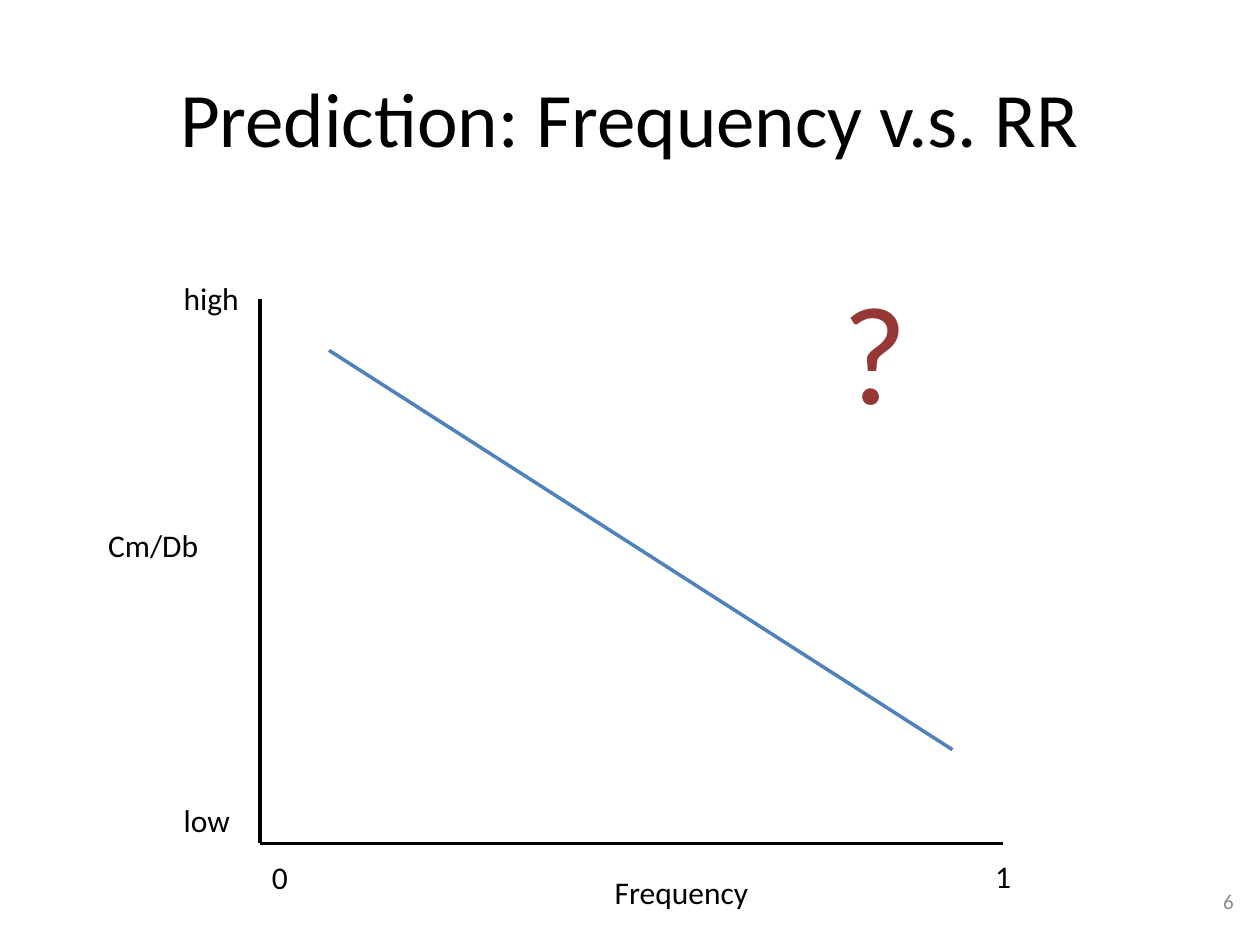
from pptx import Presentation
from pptx import util as u
from pptx.dml.color import RGBColor
from pptx.enum import shapes, text
from pptx.oxml.ns import qn
from lxml import etree

THEME = {
    "font": "Calibri",
    "ink": "000000", "muted": "8C8C8C", "trend": "4F81BD", "query": "953735",
    "title": 44, "label": 18, "number": 12, "mark": 80, "line": 2,
}

# Content: text and box (left, top, width, height) in points
TITLE = ("Prediction: Frequency v.s. RR", (36, 21.6, 648, 90))
NUMBER = ("6", (544.3, 500.4, 167.8, 28.8))
MARK = ("?", (474.5, 147.6, 51.8, 104.4))

# Axis labels: text, left, top, width
LABEL_H = 28.8
LABELS = [
    ("Cm/Db", 54.7, 296.9, 66.2),
    ("Frequency", 344.2, 495.4, 91.4),
    ("1", 561.6, 486, 23.8),
    ("high", 97.9, 156.2, 46.1),
    ("low", 97.9, 454.3, 41),
    ("0", 148.3, 486.7, 23.8),
]

# Axes meet at the origin; the trend falls from left to right
ORIGIN = (148.5, 482)
Y_TOP, X_END = 170.6, 573.1
LINES = [
    ((ORIGIN[0], Y_TOP), ORIGIN, "ink"),
    (ORIGIN, (X_END, ORIGIN[1]), "ink"),
    ((188, 200.2), (544.3, 428.4), "trend"),
]

prs = Presentation()
prs.slide_width, prs.slide_height = u.Pt(720), u.Pt(540)
s = prs.slides.add_slide(prs.slide_layouts[6])


def add_text(content, box, size="label", color="ink", align="LEFT",
             anchor="TOP", wrap=False):
    sp = s.shapes.add_textbox(*map(u.Pt, box))
    tf = sp.text_frame
    tf.word_wrap = wrap
    tf.vertical_anchor = getattr(text.MSO_ANCHOR, anchor)
    p = tf.paragraphs[0]
    p.alignment = getattr(text.PP_ALIGN, align)
    r = p.add_run()
    r.text = content
    r.font.name = THEME["font"]
    r.font.size = u.Pt(THEME[size])
    r.font.color.rgb = RGBColor.from_string(THEME[color])


def add_line(start, end, color):
    sp = s.shapes.add_connector(shapes.MSO_CONNECTOR.STRAIGHT,
                                *map(u.Pt, start + end))
    sp.line.width = u.Pt(THEME["line"])
    sp.line.color.rgb = RGBColor.from_string(THEME[color])
    etree.SubElement(sp._element.spPr, qn("a:effectLst"))


# Title and slide number
add_text(*TITLE, size="title", align="CENTER", anchor="MIDDLE", wrap=True)
add_text(*NUMBER, size="number", color="muted", align="RIGHT",
         anchor="MIDDLE", wrap=True)

# Axes and predicted trend
for start, end, color in LINES:
    add_line(start, end, color)

# Axis labels
for content, left, top, width in LABELS:
    add_text(content, (left, top, width, LABEL_H))

# Question mark
add_text(*MARK, size="mark", color="query")

prs.save("out.pptx")
